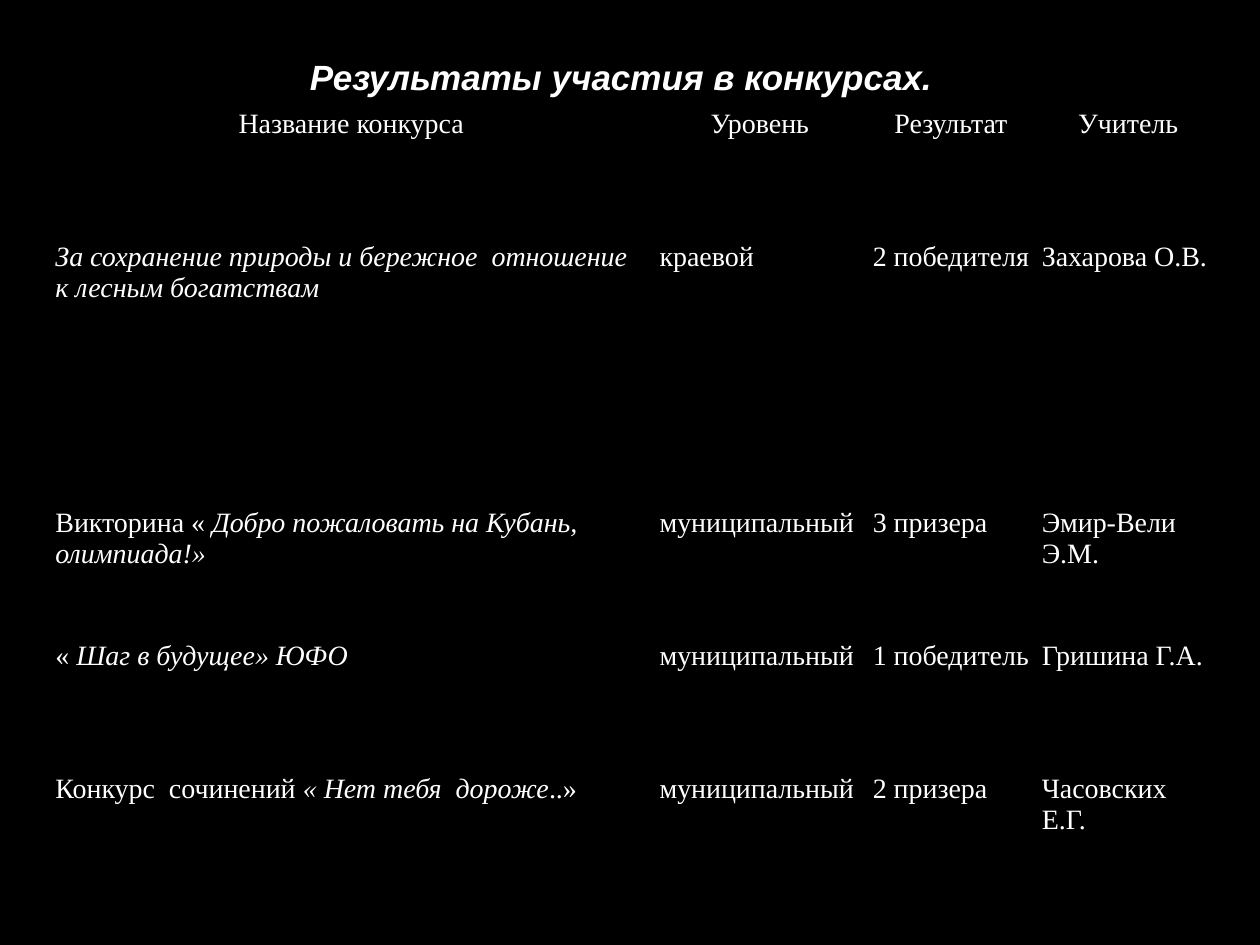
from lxml.etree import SubElement
from pptx import Presentation
from pptx.dml.color import RGBColor
from pptx.enum.text import MSO_ANCHOR, PP_ALIGN
from pptx.oxml.ns import qn
from pptx.util import Inches, Pt

BLACK, WHITE = "000000", "FFFFFF"
COLS = [4.79, 1.69, 1.34, 1.47]
ROWS = [1.05, 2.11, 1.05, 1.05, 1.05]
HEAD = ["Название конкурса", "Уровень", "Результат", "Учитель"]
# Parts between bars alternate: upright, italic, upright
BODY = [
    ["|За сохранение природы и бережное  отношение к лесным богатствам",
     "краевой", "2 победителя", "Захарова О.В."],
    ["Викторина « |Добро пожаловать на Кубань, олимпиада!»",
     "муниципальный", "3 призера", "Эмир-Вели Э.М."],
    ["« |Шаг в будущее» ЮФО",
     "муниципальный", "1 победитель", "Гришина Г.А."],
    ["Конкурс  сочинений |« Нет тебя  дороже|..»",
     "муниципальный", "2 призера", "Часовских Е.Г."],
]


def color(code):
    return RGBColor.from_string(code)


def style(run, face, size, bold=False, italic=False):
    font = run.font
    font.name, font.size = face, Pt(size)
    font.bold, font.italic = bold, italic
    font.color.rgb = color(WHITE)


def add_title(slide, left, top, width, height):
    title = slide.shapes.title
    title.left, title.top = Inches(left), Inches(top)
    title.width, title.height = Inches(width), Inches(height)
    frame = title.text_frame
    frame.text = "Результаты участия в конкурсах."
    frame.word_wrap = False
    frame.vertical_anchor = MSO_ANCHOR.MIDDLE
    para = frame.paragraphs[0]
    para.alignment = PP_ALIGN.CENTER
    style(para.runs[0], "Arial", 20, bold=True, italic=True)


def add_border(cell, code):
    props = cell._tc.get_or_add_tcPr()
    for index, side in enumerate(("lnL", "lnR", "lnT", "lnB")):
        line = props.makeelement(qn("a:" + side), {"w": str(Pt(1))})
        props.insert(index, line)
        fill = SubElement(line, qn("a:solidFill"))
        SubElement(fill, qn("a:srgbClr"), val=code)


def fill_cell(cell, text, align):
    cell.margin_left = cell.margin_right = Inches(0.05)
    cell.margin_top = cell.margin_bottom = 0
    cell.fill.background()
    add_border(cell, BLACK)
    para = cell.text_frame.paragraphs[0]
    para.alignment = align
    for index, part in enumerate(text.split("|")):
        if part:
            run = para.add_run()
            run.text = part
            style(run, "Times New Roman", 16, italic=index % 2 == 1)


def add_results(slide, left, top, width, height):
    data = [HEAD] + BODY
    table = slide.shapes.add_table(
        len(ROWS), len(COLS), Inches(left), Inches(top),
        Inches(width), Inches(height)).table
    table.first_row = table.horz_banding = False
    for col, part in zip(table.columns, COLS):
        col.width = Inches(width * part / sum(COLS))
    for row, part, texts in zip(table.rows, ROWS, data):
        row.height = Inches(height * part / sum(ROWS))
        align = PP_ALIGN.CENTER if texts is HEAD else PP_ALIGN.LEFT
        for cell, text in zip(row.cells, texts):
            fill_cell(cell, text, align)


def main():
    deck = Presentation()
    deck.slide_width, deck.slide_height = Inches(10), Inches(7.5)
    slide = deck.slides.add_slide(deck.slide_layouts[5])
    back = slide.background.fill
    back.solid()
    back.fore_color.rgb = color(BLACK)
    add_results(slide, 0.39, 0.86, 9.3, 6.33)
    add_title(slide, 2.34, 0.39, 5.18, 0.44)
    deck.save("out.pptx")


if __name__ == "__main__":
    main()
